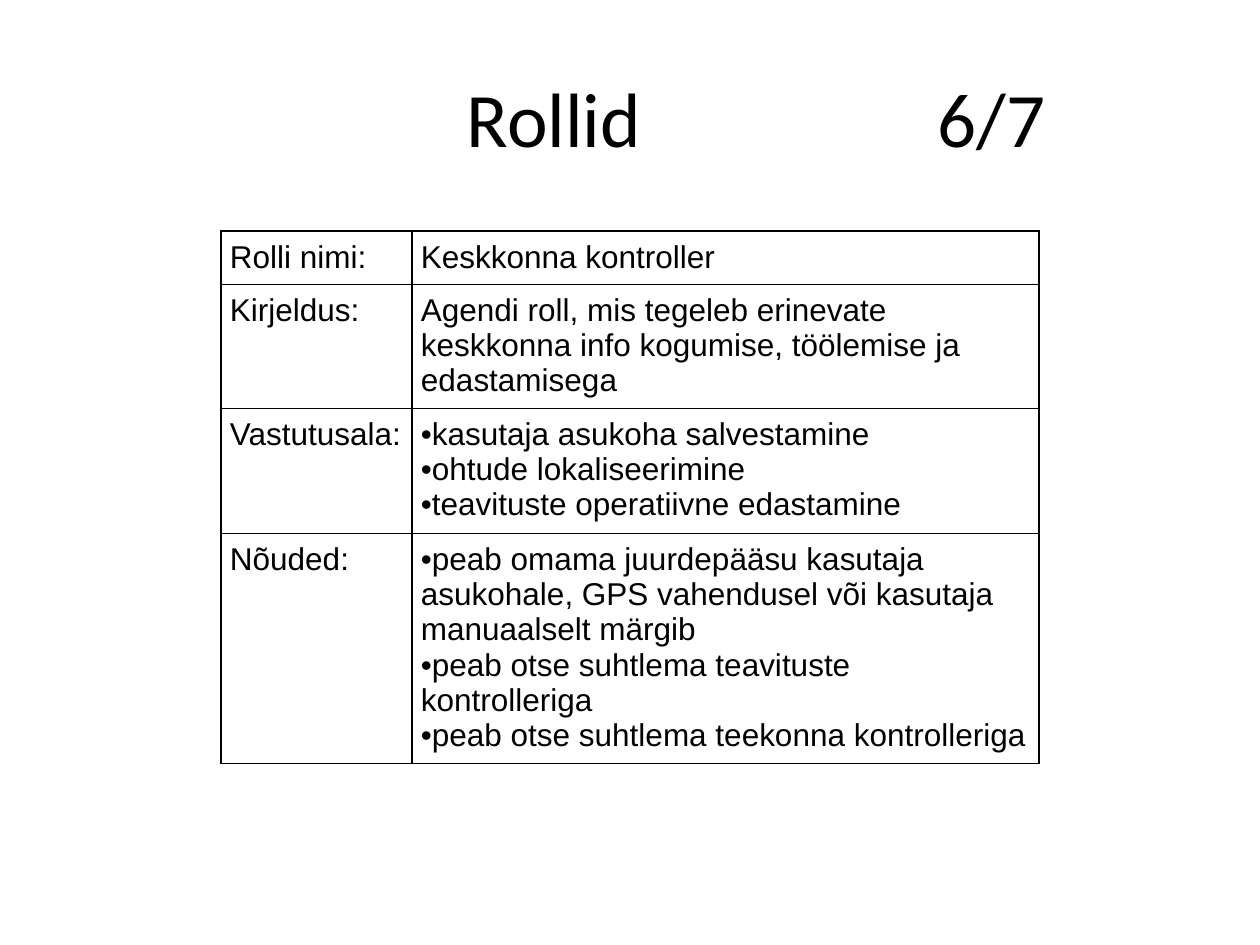
from dataclasses import dataclass

from lxml import etree
from pptx import Presentation
from pptx.dml.color import RGBColor
from pptx.enum import text
from pptx.oxml import ns
from pptx.util import Emu, Pt

PX = 914400 / 126


@dataclass(frozen=True)
class Theme:
    ink: str = "000000"
    title_font: str = "Calibri"
    body_font: str = "Arial"
    title_size: int = 44
    body_size: int = 18
    body_leading: float = 20.1
    border_width: float = 0.75


THEME = Theme()
TITLE_BOX = (63, 38, 1134, 157)
TABLE_BOX = (221, 231, 818, 532)
TITLE_TABS = (404, 875)
COLUMN_WIDTHS = (191, 627)
ROW_HEIGHTS = (53, 124, 125, 230)
CELL_INSETS = {"margin_left": 9, "margin_top": 9,
               "margin_right": 11, "margin_bottom": 9}

# A string is plain text, a list is a bulleted list
ROLE = [
    ("Rolli nimi:", "Keskkonna kontroller"),
    ("Kirjeldus:", "Agendi roll, mis tegeleb erinevate keskkonna info kogumise, "
                   "töölemise ja edastamisega"),
    ("Vastutusala:", ["kasutaja asukoha salvestamine",
                      "ohtude lokaliseerimine",
                      "teavituste operatiivne edastamine"]),
    ("Nõuded:", ["peab omama juurdepääsu kasutaja asukohale, GPS vahendusel "
                 "või kasutaja manuaalselt märgib",
                 "peab otse suhtlema teavituste kontrolleriga",
                 "peab otse suhtlema teekonna kontrolleriga"]),
]


def px(length):
    return Emu(round(length * PX))


def add_element(parent, tag, **attributes):
    element = etree.SubElement(parent, ns.qn(tag))
    for name, value in attributes.items():
        element.set(name, str(value))
    return element


def set_format(target, **values):
    for name, value in values.items():
        setattr(target, name, value)


def add_span(para, words, font, size):
    span = para.add_run()
    span.text = words
    set_format(span.font, name=font, size=Pt(size))
    span.font.color.rgb = RGBColor.from_string(THEME.ink)


def add_title(page, box, words):
    frame = page.shapes.add_textbox(*map(px, box)).text_frame
    set_format(frame, word_wrap=True, vertical_anchor=text.MSO_ANCHOR.MIDDLE,
               margin_left=0, margin_right=0)
    para = frame.paragraphs[0]
    # Tab stops place the heading and the page count
    stops = add_element(para._p.get_or_add_pPr(), "a:tabLst")
    for position in TITLE_TABS:
        add_element(stops, "a:tab", pos=px(position), algn="l")
    add_span(para, "".join("\t" + word for word in words),
             THEME.title_font, THEME.title_size)


def add_borders(cell):
    properties = cell._tc.get_or_add_tcPr()
    for index, side in enumerate("LRTB"):
        line = add_element(properties, f"a:ln{side}", w=Pt(THEME.border_width))
        fill = add_element(line, "a:solidFill")
        add_element(fill, "a:srgbClr", val=THEME.ink)
        properties.insert(index, line)


def add_bullet(para):
    properties = para._p.get_or_add_pPr()
    properties.set("marL", "0")
    properties.set("indent", "0")
    add_element(properties, "a:buFont", typeface=THEME.body_font)
    add_element(properties, "a:buChar", char="•")


def fill_cell(cell, content):
    set_format(cell, **{side: px(inset) for side, inset in CELL_INSETS.items()})
    cell.fill.background()
    add_borders(cell)
    bulleted = isinstance(content, list)
    frame = cell.text_frame
    for index, words in enumerate(content if bulleted else [content]):
        para = frame.add_paragraph() if index else frame.paragraphs[0]
        if bulleted:
            add_bullet(para)
        set_format(para, line_spacing=Pt(THEME.body_leading))
        set_format(para.font, name=THEME.body_font, size=Pt(THEME.body_size))
        add_span(para, words, THEME.body_font, THEME.body_size)


def add_role_table(page, box, rows):
    table = page.shapes.add_table(len(rows), len(COLUMN_WIDTHS), *map(px, box)).table
    set_format(table, first_row=False, horz_banding=False)
    for column, width in zip(table.columns, COLUMN_WIDTHS):
        column.width = px(width)
    for row, height, contents in zip(table.rows, ROW_HEIGHTS, rows):
        row.height = px(height)
        for cell, content in zip(row.cells, contents):
            fill_cell(cell, content)


def main():
    deck = Presentation()
    set_format(deck, slide_width=px(1260), slide_height=px(945))
    page = deck.slides.add_slide(deck.slide_layouts[6])
    add_title(page, TITLE_BOX, ("Rollid", "6/7"))
    add_role_table(page, TABLE_BOX, ROLE)
    deck.save("out.pptx")


if __name__ == "__main__":
    main()
